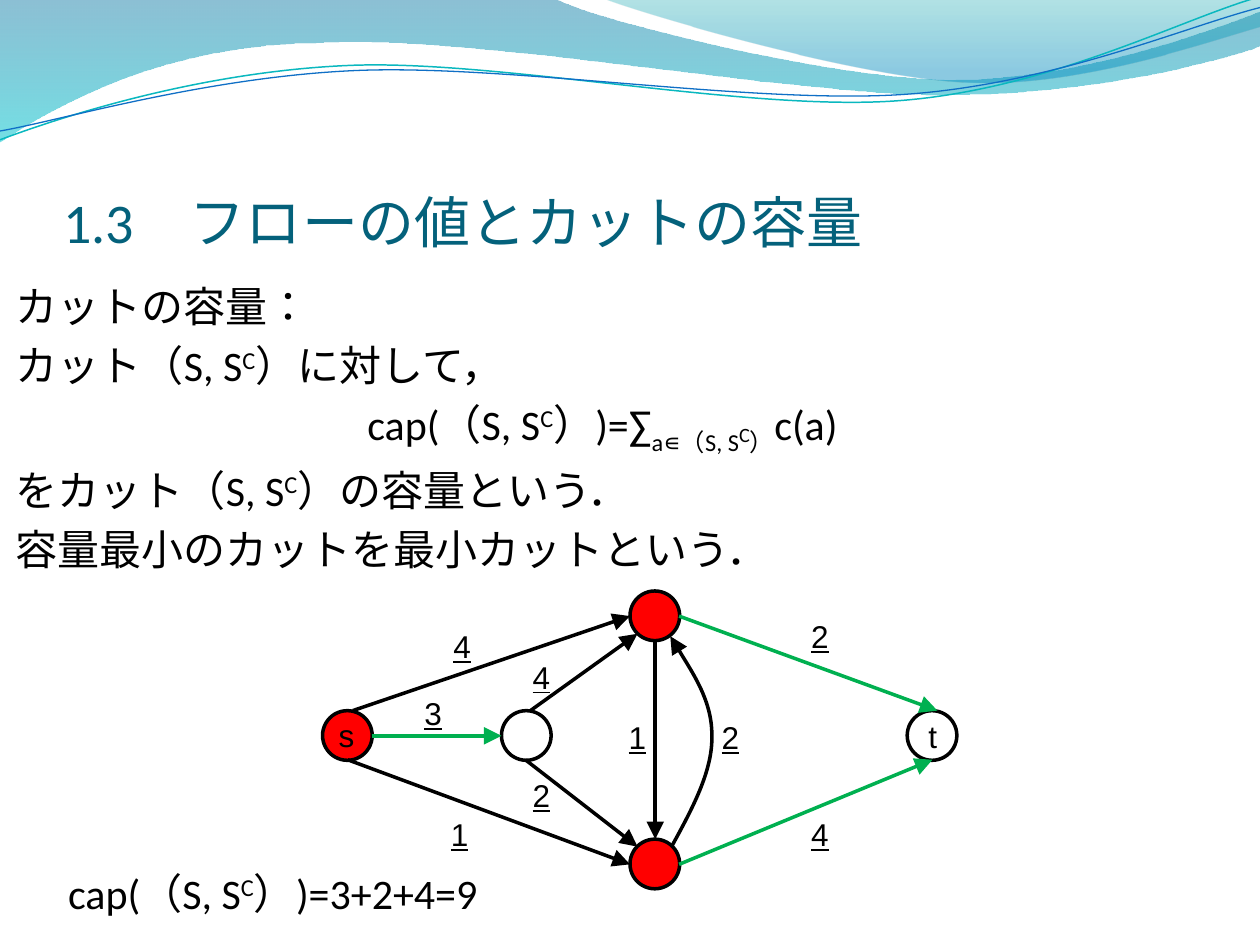
from lxml import etree
from pptx import Presentation
from pptx.dml.color import RGBColor
from pptx.enum.lang import MSO_LANGUAGE_ID
from pptx.enum.shapes import MSO_CONNECTOR, MSO_SHAPE
from pptx.enum.text import MSO_ANCHOR, MSO_AUTO_SIZE, PP_ALIGN
from pptx.oxml.ns import qn
from pptx.util import Inches, Pt

STRAIGHT = MSO_CONNECTOR.STRAIGHT
OVAL = MSO_SHAPE.OVAL
LEFT = PP_ALIGN.LEFT
TOP, BOTTOM = MSO_ANCHOR.TOP, MSO_ANCHOR.BOTTOM
NO_FIT, GROW = MSO_AUTO_SIZE.NONE, MSO_AUTO_SIZE.SHAPE_TO_FIT_TEXT
JAPANESE = MSO_LANGUAGE_ID.JAPANESE

BLACK = RGBColor(0x00, 0x00, 0x00)
RED = RGBColor(0xFF, 0x00, 0x00)
GREEN = RGBColor(0x00, 0xB0, 0x50)
TITLE_BLUE = RGBColor(0x04, 0x61, 0x7B)
DEEP_BLUE = RGBColor(0x00, 0x74, 0xA1)
AQUA = RGBColor(0x00, 0xC6, 0xCF)
TEAL = RGBColor(0x00, 0xA1, 0xA9)
SKY = RGBColor(0x00, 0x8B, 0xBF)
LINE_TEAL = RGBColor(0x0A, 0xB8, 0xBF)
LINE_BLUE = RGBColor(0x0F, 0x6F, 0xC6)

COLUMNS = 100
NODE_SIZE = 3.94

WAVES = [
    ((0, -0.1), [(44, -0.1), (47.6, 1.7, 66.4, 6.3, 75.8, 6.3),
                 (85.3, 6.3, 95.8, 2.6, 100, 0.9), (100.1, 3.6),
                 (98.3, 4.4, 87, 7.6, 74.6, 7.5), (62.2, 7.5, 38.2, 2.8, 25.7, 3.4),
                 (12.9, 3.5, 4.6, 8.3, -0.1, 11.3)],
     [(0, DEEP_BLUE, 45), (1, AQUA, 55)]),
    ((47.9, -0.1), [(50.9, 1.1, 68.2, 6.2, 76.9, 6.5),
                    (85.6, 6.9, 96.1, 3.2, 100, 2.1), (100, 0)],
     [(0, TEAL, 30), (0.8, SKY, 45)]),
]
WAVE_LINES = [
    ((0, 11.1), [(4.8, 9.3, 15.8, 5.7, 27.7, 5.2), (39.5, 4.7, 59.3, 8.9, 71.3, 8),
                 (83.3, 7.1, 93.8, 1.5, 99.8, -0.2)], LINE_TEAL, 0.85),
    ((0, 10.4), [(4.7, 9.6, 16.4, 6.1, 28.3, 5.6), (40.3, 5.1, 59.7, 8.3, 71.7, 7.5),
                 (83.6, 6.7, 94.1, 2.1, 100, 0.6)], LINE_BLUE, 0.75),
]

CUT = [("（S, S", 0), ("C", 30), ("）", 0)]
BODY = [
    ([("カットの容量：", 0)], 0, 4.8),
    ([("カット", 0), *CUT, ("に対して，", 0)], 0, 4.8),
    ([("cap(", 0), *CUT, (")=∑", 0), ("a∊（S, S", -25), ("C", -5), ("）", -25),
      ("c(a)", 0)], 27.9, 4.8),
    ([("をカット", 0), *CUT, ("の容量という．", 0)], 0, 4.8),
    ([("容量最小のカットを最小カットという．", 0)], 0, 4.8),
    ([("cap(", 0), *CUT, (")=3+2+4=9", 0)], 4.15, 168),
]

NODES = [(25.6, 56.4, RED), (39.8, 56.4, None), (50, 46.9, RED),
         (50, 66.6, RED), (72, 56.4, None)]
ARROWS = [
    (29.5, 58.4, 39.8, 58.4, GREEN), (28, 56.4, 50, 48.9, BLACK),
    (27.6, 60.3, 50, 68.6, BLACK), (42.1, 56.4, 50.6, 50.3, BLACK),
    (41.7, 60.3, 50.6, 67.2, BLACK), (53.9, 48.9, 74.4, 56.4, GREEN),
    (53.9, 68.6, 74, 60.3, GREEN), (52, 50.9, 52, 66.6, BLACK),
]
BACK_ARC = ((53.3, 67.2), [(55, 64.1, 56.6, 61.1, 56.5, 58.3),
                           (56.5, 55.5, 53.2, 50.5, 53.2, 50.5)])
CAPACITIES = [("3", 32.7, 54.6), ("4", 35, 49.3), ("1", 34.8, 64.2),
              ("2", 41.3, 61.1), ("4", 41.3, 51.7), ("1", 48.9, 56.5),
              ("2", 56.3, 56.5), ("2", 63.4, 48.5), ("4", 63.4, 64.2)]
NODE_NAMES = [("s", 25.9, 56.3), ("t", 72.7, 56.4)]


def write(paragraph, text, size=24, font="Calibri", color=BLACK, underline=None, baseline=0):
    run = paragraph.add_run()
    run.text = text
    run.font.size = Pt(size)
    run.font.name = font
    run.font.color.rgb = color
    run.font.underline = underline
    run.font.language_id = JAPANESE
    if baseline:
        run._r.get_or_add_rPr().set("baseline", str(baseline * 1000))


def bend(shape, segments):
    corners = shape._element.spPr.iter(qn("a:lnTo"))
    corners = iter(list(corners))
    for segment in segments:
        first = next(corners)
        if len(segment) == 6:
            first.tag = qn("a:cubicBezTo")
            for corner in (next(corners), next(corners)):
                first.append(corner[0])
                corner.getparent().remove(corner)


class SlideBuilder:
    def __init__(self, presentation):
        self.cell = presentation.slide_width / COLUMNS
        self.slide = presentation.slides.add_slide(presentation.slide_layouts[1])
        self.shapes = self.slide.shapes

    def grid(self, *cells):
        return [round(cell * self.cell) for cell in cells]

    def place(self, shape, *cells):
        shape.left, shape.top, shape.width, shape.height = self.grid(*cells)

    def stroke(self, shape, color, width, arrow=False):
        shape.line.color.rgb = color
        shape.line.width = Pt(width)
        if arrow:
            outline = shape._element.spPr.find(qn("a:ln"))
            etree.SubElement(outline, qn("a:tailEnd"), type="triangle", w="lg", len="lg")

    def title(self, text):
        shape = self.shapes.title
        self.place(shape, 5, 7.7, 90, 12.5)
        frame = shape.text_frame
        frame.auto_size = NO_FIT
        frame.vertical_anchor = BOTTOM
        frame.margin_left = frame.margin_right = frame.margin_bottom = 0
        frame.paragraphs[0].alignment = LEFT
        write(frame.paragraphs[0], text, size=32, color=TITLE_BLUE)

    def body(self, lines):
        shape = self.slide.placeholders[1]
        self.place(shape, 0.25, 21.8, 99.75, 48)
        frame = shape.text_frame
        frame.auto_size = NO_FIT
        frame.vertical_anchor = TOP
        for number, (runs, indent, space) in enumerate(lines):
            paragraph = frame.add_paragraph() if number else frame.paragraphs[0]
            paragraph.space_before = Pt(space)
            properties = paragraph._p.get_or_add_pPr()
            properties.set("marL", str(self.grid(indent)[0]))
            properties.set("indent", "0")
            etree.SubElement(properties, qn("a:buNone"))
            for text, baseline in runs:
                write(paragraph, text, size=20 if baseline == -5 else 24, baseline=baseline)

    def outline(self, start, segments, close=False):
        points = [self.grid(*segment[i:i + 2])
                  for segment in segments for i in range(0, len(segment), 2)]
        builder = self.shapes.build_freeform(*self.grid(*start), scale=1.0)
        builder.add_line_segments(points, close=close)
        shape = builder.convert_to_shape()
        bend(shape, segments)
        shape.shadow.inherit = False
        return shape

    def wave(self, start, segments, stops):
        shape = self.outline(start, segments, close=True)
        shape.line.fill.background()
        shape.fill.gradient()
        shape.fill.gradient_angle = 270
        for stop, (position, color, _) in zip(shape.fill.gradient_stops, stops):
            stop.position = position
            stop.color.rgb = color
        colors = shape._element.spPr.iter(qn("a:srgbClr"))
        for color, (_, _, opacity) in zip(colors, stops):
            etree.SubElement(color, qn("a:alpha"), val=str(opacity * 1000))

    def curve(self, start, segments, color, width, arrow=False):
        shape = self.outline(start, segments)
        shape.fill.background()
        self.stroke(shape, color, width, arrow)

    def node(self, left, top, color):
        shape = self.shapes.add_shape(OVAL, *self.grid(left, top, NODE_SIZE, NODE_SIZE))
        shape.shadow.inherit = False
        if color is None:
            shape.fill.background()
        else:
            shape.fill.solid()
            shape.fill.fore_color.rgb = color
        self.stroke(shape, BLACK, 2)

    def arrow(self, x1, y1, x2, y2, color):
        connector = self.shapes.add_connector(STRAIGHT, *self.grid(x1, y1, x2, y2))
        self.stroke(connector, color, 2, arrow=True)
        etree.SubElement(connector._element.spPr, qn("a:effectLst"))

    def label(self, text, left, top, underline=None):
        frame = self.shapes.add_textbox(*self.grid(left, top, 3.4, 4)).text_frame
        frame.word_wrap = False
        frame.auto_size = GROW
        write(frame.paragraphs[0], text, size=18, font="Arial", underline=underline)


def main():
    presentation = Presentation()
    presentation.slide_width, presentation.slide_height = Inches(10), Inches(7.5)
    builder = SlideBuilder(presentation)
    for wave in WAVES:
        builder.wave(*wave)
    for line in WAVE_LINES:
        builder.curve(*line)
    builder.title("1.3　フローの値とカットの容量")
    builder.body(BODY)
    for node in NODES:
        builder.node(*node)
    for arrow in ARROWS:
        builder.arrow(*arrow)
    builder.curve(*BACK_ARC, BLACK, 2, arrow=True)
    for capacity in CAPACITIES:
        builder.label(*capacity, underline=True)
    for name in NODE_NAMES:
        builder.label(*name)
    presentation.save("out.pptx")


if __name__ == "__main__":
    main()
